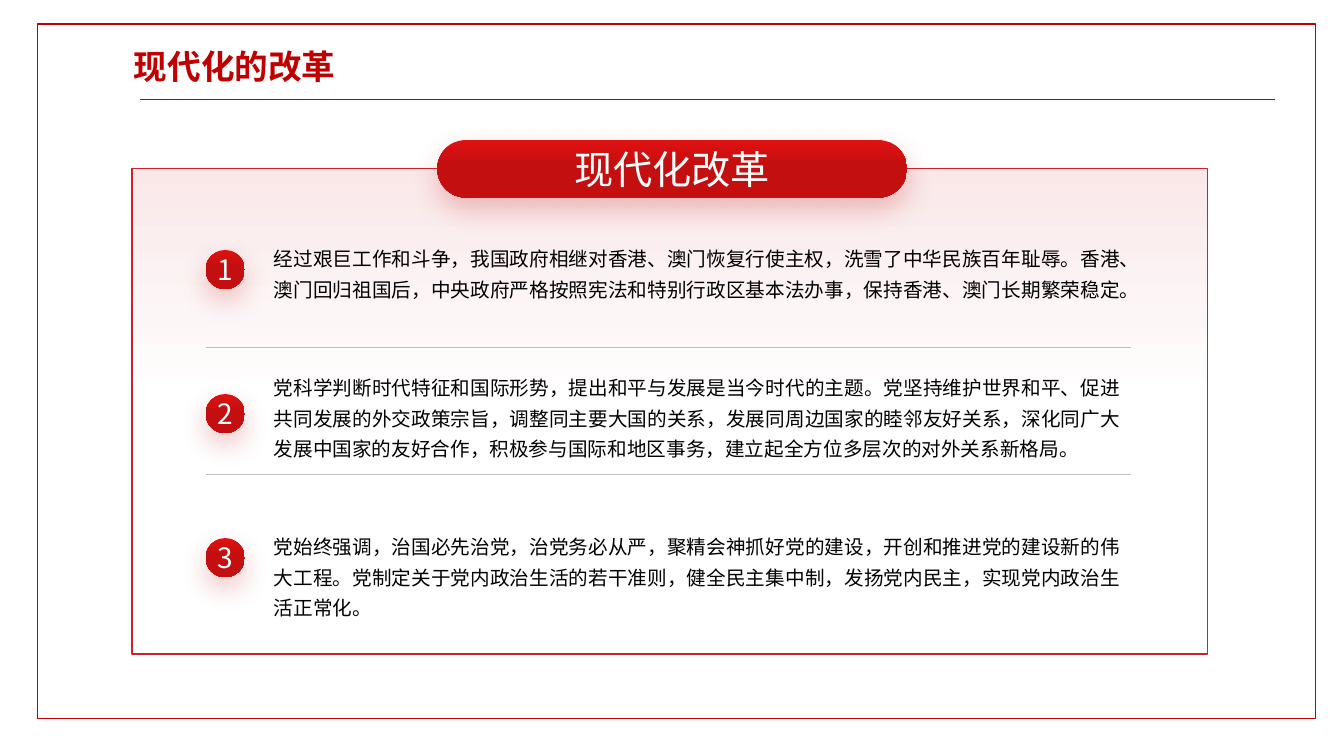
from dataclasses import dataclass

from lxml.etree import SubElement
from pptx import Presentation
from pptx.dml.color import RGBColor
from pptx.enum.shapes import MSO_CONNECTOR, MSO_SHAPE
from pptx.enum.text import MSO_ANCHOR, MSO_AUTO_SIZE, PP_ALIGN
from pptx.oxml.ns import qn
from pptx.util import Cm, Pt


@dataclass(frozen=True)
class Theme:
    font: str = "Noto Sans CJK SC"
    red: str = "C00000"
    panel_red: str = "CB232D"
    bright_red: str = "DF1111"
    deep_red: str = "C30F0F"
    white: str = "FFFFFF"
    black: str = "000000"
    grey: str = "BFBFBF"
    title_size: int = 24
    banner_size: int = 28
    number_size: int = 20
    body_size: int = 14


class SlideBuilder:
    def __init__(self, slide, theme):
        self.slide = slide
        self.theme = theme

    def set_text(self, frame, text, size, color, align, bold=False, spacing=None):
        frame.word_wrap = True
        paragraph = frame.paragraphs[0]
        paragraph.text = text
        paragraph.alignment = align
        if spacing:
            paragraph.line_spacing = spacing
        font = paragraph.font
        font.size = Pt(size)
        font.bold = bold
        font.color.rgb = RGBColor.from_string(color)
        font.name = self.theme.font
        defaults = paragraph._p.pPr.find(qn("a:defRPr"))
        SubElement(defaults, qn("a:ea"), typeface=self.theme.font)

    def title(self, text, left, top, width, height):
        title = self.slide.shapes.title
        title.left, title.top, title.width, title.height = map(Cm, (left, top, width, height))
        title.text_frame.vertical_anchor = MSO_ANCHOR.TOP
        title.text_frame.auto_size = MSO_AUTO_SIZE.SHAPE_TO_FIT_TEXT
        self.set_text(title.text_frame, text, self.theme.title_size, self.theme.red,
                      PP_ALIGN.JUSTIFY, bold=True)

    def shape(self, kind, left, top, width, height):
        shape = self.slide.shapes.add_shape(kind, *map(Cm, (left, top, width, height)))
        shape.shadow.inherit = False
        return shape

    def outlined_box(self, left, top, width, height, color):
        box = self.shape(MSO_SHAPE.RECTANGLE, left, top, width, height)
        box.fill.background()
        box.line.color.rgb = RGBColor.from_string(color)
        box.line.width = Pt(1)
        return box

    def gradient(self, shape, stops):
        shape.fill.gradient()
        shape.fill.gradient_angle = 270
        for stop, (position, color) in zip(shape.fill.gradient_stops, stops):
            stop.position = position
            stop.color.rgb = RGBColor.from_string(color)

    def panel(self, left, top, width, height):
        color = self.theme.panel_red
        panel = self.outlined_box(left, top, width, height, color)
        self.gradient(panel, [(0, color), (0.44, color)])
        stops = panel._element.spPr.find(qn("a:gradFill")).iter(qn("a:srgbClr"))
        for stop_color, opacity in zip(stops, (10, 0)):
            SubElement(stop_color, qn("a:alpha"), val=str(opacity * 1000))

    def badge(self, kind, text, size, left, top, width, height):
        badge = self.shape(kind, left, top, width, height)
        self.gradient(badge, [(0, self.theme.bright_red), (0.45, self.theme.deep_red)])
        badge.line.fill.background()
        effects = badge._element.spPr.find(qn("a:effectLst"))
        shadow = SubElement(effects, qn("a:outerShdw"), blurRad=str(Pt(20)),
                            dist=str(Pt(8)), dir="5400000", algn="t", rotWithShape="0")
        shadow_color = SubElement(shadow, qn("a:srgbClr"), val=self.theme.deep_red)
        SubElement(shadow_color, qn("a:alpha"), val="23000")
        frame = badge.text_frame
        frame.margin_left = frame.margin_right = frame.margin_top = frame.margin_bottom = 0
        frame.vertical_anchor = MSO_ANCHOR.MIDDLE
        self.set_text(frame, text, size, self.theme.white, PP_ALIGN.CENTER)
        return badge

    def banner(self, text, left, top, width, height):
        banner = self.badge(MSO_SHAPE.ROUNDED_RECTANGLE, text, self.theme.banner_size,
                            left, top, width, height)
        banner.adjustments[0] = 0.5

    def item(self, number, text, number_top, text_top, text_height):
        circle = self.badge(MSO_SHAPE.OVAL, str(number), self.theme.number_size,
                            5.18, number_top, 0.99, 0.99)
        body = self.slide.shapes.add_textbox(
            Cm(6.65), Cm(text_top), Cm(21.84), Cm(text_height))
        body.text_frame.auto_size = MSO_AUTO_SIZE.SHAPE_TO_FIT_TEXT
        self.set_text(body.text_frame, text, self.theme.body_size, self.theme.black,
                      PP_ALIGN.JUSTIFY, spacing=1.3)
        self.slide.shapes.add_group_shape([circle, body])

    def rule(self, left, right, top, color):
        rule = self.slide.shapes.add_connector(
            MSO_CONNECTOR.STRAIGHT, Cm(left), Cm(top), Cm(right), Cm(top))
        rule.line.color.rgb = RGBColor.from_string(color)
        rule.line.width = Pt(0.5)
        SubElement(rule._element.spPr, qn("a:effectLst"))


ITEMS = [
    ("经过艰巨工作和斗争，我国政府相继对香港、澳门恢复行使主权，洗雪了中华民族百年耻辱。"
     "香港、澳门回归祖国后，中央政府严格按照宪法和特别行政区基本法办事，"
     "保持香港、澳门长期繁荣稳定。", 5.92, 1.73),
    ("党科学判断时代特征和国际形势，提出和平与发展是当今时代的主题。"
     "党坚持维护世界和平、促进共同发展的外交政策宗旨，调整同主要大国的关系，"
     "发展同周边国家的睦邻友好关系，深化同广大发展中国家的友好合作，"
     "积极参与国际和地区事务，建立起全方位多层次的对外关系新格局。", 9.17, 2.49),
    ("党始终强调，治国必先治党，治党务必从严，聚精会神抓好党的建设，"
     "开创和推进党的建设新的伟大工程。党制定关于党内政治生活的若干准则，"
     "健全民主集中制，发扬党内民主，实现党内政治生活正常化。", 13.18, 2.49),
]
FIRST_NUMBER_TOP = 6.3
NUMBER_PITCH = 3.63


def main():
    presentation = Presentation()
    presentation.slide_width = Cm(33.87)
    presentation.slide_height = Cm(19.05)
    theme = Theme()
    slide = presentation.slides.add_slide(presentation.slide_layouts[5])
    builder = SlideBuilder(slide, theme)

    builder.outlined_box(0.94, 0.61, 32.21, 17.5, theme.red)
    builder.title("现代化的改革", 3.12, 1.04, 6.4, 1.27)
    builder.rule(3.53, 32.13, 2.51, theme.red)
    builder.panel(3.33, 4.24, 27.1, 12.24)
    builder.banner("现代化改革", 11.02, 3.53, 11.84, 1.45)
    for index, (text, text_top, text_height) in enumerate(ITEMS):
        number_top = FIRST_NUMBER_TOP + index * NUMBER_PITCH
        builder.item(index + 1, text, number_top, text_top, text_height)
    for divider_top in (8.76, 11.96):
        builder.rule(5.18, 28.5, divider_top, theme.grey)

    presentation.save("out.pptx")


if __name__ == "__main__":
    main()
